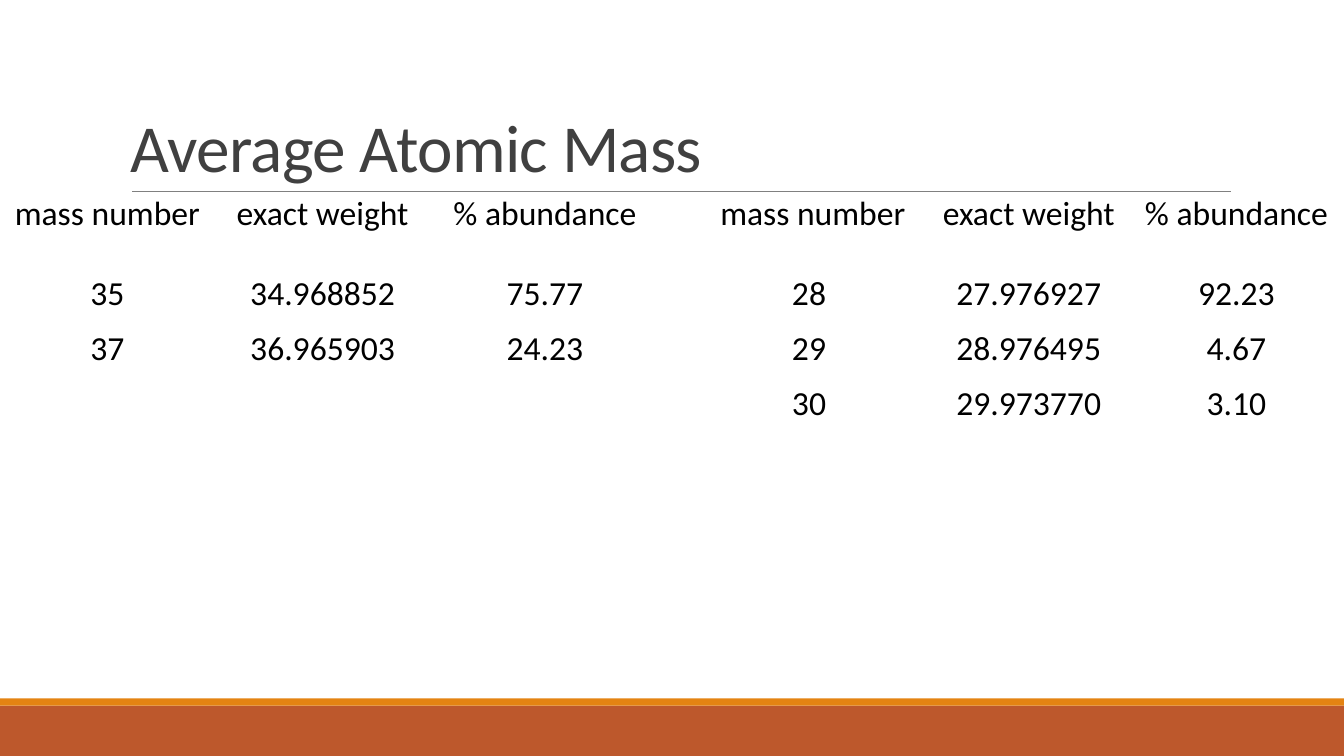
from pptx import Presentation
from pptx.dml.color import RGBColor
from pptx.enum.shapes import MSO_CONNECTOR, MSO_SHAPE
from pptx.enum.text import MSO_ANCHOR, PP_ALIGN
from pptx.oxml.ns import qn
from pptx.util import Inches, Pt
from lxml import etree

RECTANGLE = MSO_SHAPE.RECTANGLE
STRAIGHT = MSO_CONNECTOR.STRAIGHT
BOTTOM, MIDDLE = MSO_ANCHOR.BOTTOM, MSO_ANCHOR.MIDDLE
CENTER = PP_ALIGN.CENTER
PLAIN_TABLE_STYLE = "{2D5ABB26-0587-4C30-8999-92F81FD0307C}"

COLUMN_WIDTHS = [2.13, 2.14, 2.27, 0.29, 2.39, 1.97, 2.15]
ROW_HEIGHTS = [1.02, 0.58, 0.49, 0.59]
ISOTOPES = [
    ["mass number", "exact weight", "% abundance", "", " mass number", "exact weight", "% abundance"],
    ["35", "34.968852", "75.77", "", "28", "27.976927", "92.23"],
    ["37", "36.965903", "24.23", "", "29", "28.976495", "4.67"],
    ["", "", "", "", "30", "29.973770", "3.10"],
]


def color(value):
    return RGBColor.from_string(value)


def write(para, text, size, font_color):
    span = para.add_run()
    span.text = text
    for name, value in {"name": "Calibri", "size": Pt(size), "bold": False}.items():
        setattr(span.font, name, value)
    span.font.color.rgb = color(font_color)
    return span


def add_band(page, top, height, fill):
    band = page.shapes.add_shape(RECTANGLE, 0, Inches(top), Inches(13.33), Inches(height))
    band.shadow.inherit = False
    band.fill.solid()
    band.fill.fore_color.rgb = color(fill)
    band.line.fill.background()


def add_rule(page, left, right, top):
    rule = page.shapes.add_connector(STRAIGHT, Inches(left), Inches(top), Inches(right), Inches(top))
    rule.line.color.rgb = color("808080")
    rule.line.width = Pt(0.5)
    etree.SubElement(rule.line._get_or_add_ln().getparent(), qn("a:effectLst"))


def add_title(page, text):
    box = page.shapes.add_textbox(Inches(1.2), Inches(0.31), Inches(11), Inches(1.59))
    frame = box.text_frame
    for name, value in {"word_wrap": True, "vertical_anchor": BOTTOM}.items():
        setattr(frame, name, value)
    para = frame.paragraphs[0]
    para.line_spacing = 0.85
    span = write(para, text, 48, "404040")
    span.font._element.set("spc", "-50")


def add_isotope_table(page):
    frame = page.shapes.add_table(len(ROW_HEIGHTS), len(COLUMN_WIDTHS), 0, Inches(1.61),
                                  Inches(sum(COLUMN_WIDTHS)), Inches(sum(ROW_HEIGHTS)))
    table = frame.table
    table.first_row = table.horz_banding = False
    table._tbl.tblPr.find(qn("a:tableStyleId")).text = PLAIN_TABLE_STYLE
    for column, width in zip(table.columns, COLUMN_WIDTHS):
        column.width = Inches(width)
    for row, height, texts in zip(table.rows, ROW_HEIGHTS, ISOTOPES):
        row.height = Inches(height)
        for cell, text in zip(row.cells, texts):
            cell.fill.background()
            cell.vertical_anchor = MIDDLE
            if text:
                para = cell.text_frame.paragraphs[0]
                para.alignment = CENTER
                write(para, text, 24, "000000")


def main():
    deck = Presentation()
    deck.slide_width, deck.slide_height = Inches(13.33), Inches(7.5)
    page = deck.slides.add_slide(deck.slide_layouts[6])
    add_band(page, 7, 0.5, "BD582C")
    add_band(page, 6.93, 0.07, "E48312")
    add_rule(page, 1.31, 12.21, 1.9)
    add_title(page, "Average Atomic Mass")
    add_isotope_table(page)
    deck.save("out.pptx")


if __name__ == "__main__":
    main()
